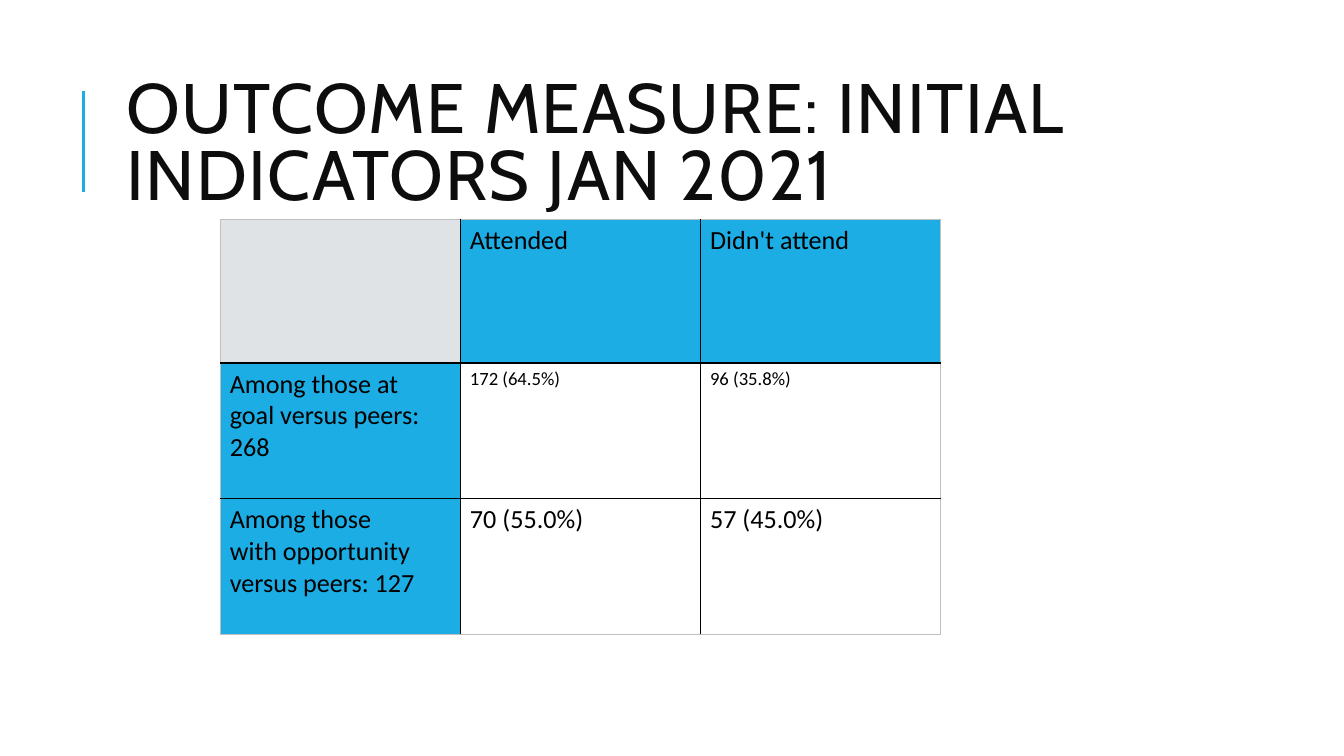
from lxml.etree import SubElement
from pptx import Presentation
from pptx.dml.color import RGBColor
from pptx.enum.shapes import MSO_CONNECTOR
from pptx.enum.text import MSO_ANCHOR, MSO_AUTO_SIZE, PP_ALIGN
from pptx.oxml.ns import qn
from pptx.util import Inches, Pt


def color(value):
    return RGBColor.from_string(value)


def add_border(cell, side, value, width):
    line = SubElement(cell._tc.get_or_add_tcPr(), qn(f"a:ln{side}"), w=str(Pt(width)))
    fill = SubElement(line, qn("a:solidFill"))
    SubElement(fill, qn("a:srgbClr"), val=value)


BLUE = "1CADE4"
GRAY = "DFE3E5"
HARD_SPACE = chr(160)

presentation = Presentation()
presentation.slide_width = Inches(10)
presentation.slide_height = Inches(10 * 9 / 16)
slide = presentation.slides.add_slide(presentation.slide_layouts[5])

accent = slide.shapes.add_connector(
    MSO_CONNECTOR.STRAIGHT, Inches(0.62), Inches(1.43), Inches(0.62), Inches(0.68)
)
accent.line.color.rgb = color(BLUE)
accent.line.width = Pt(1.5)
SubElement(accent._element.spPr, qn("a:effectLst"))

title = slide.shapes.title
title.left, title.top = Inches(0.84), Inches(0.48)
title.width, title.height = Inches(7.97), Inches(1.23)
title_frame = title.text_frame
title_frame.word_wrap = True
title_frame.auto_size = MSO_AUTO_SIZE.NONE
title_frame.vertical_anchor = MSO_ANCHOR.MIDDLE
paragraph = title_frame.paragraphs[0]
paragraph.alignment = PP_ALIGN.LEFT
paragraph.line_spacing = 0.8
run = paragraph.add_run()
run.text = "OUTCOME MEASURE: INITIAL INDICATORS JAN 2021"
run.font.name = "Cabin"
run.font.size = Pt(37.5)
run.font.color.rgb = color("0D0D0D")
run.font._element.set("spc", "75")

rows = [
    ["", "Attended", "Didn't attend"],
    [f"Among those at goal{HARD_SPACE}versus peers: 268", "172 (64.5%)", "96 (35.8%)"],
    [
        f"Among those with{HARD_SPACE}opportunity versus{HARD_SPACE}peers: 127",
        "70 (55.0%)",
        f"57{HARD_SPACE}(45.0%)",
    ],
]
row_heights = [1.07, 1.01, 1.01]
last = len(rows) - 1

table = slide.shapes.add_table(
    3, 3, Inches(1.64), Inches(1.63), Inches(5.36), Inches(3.09)
).table
for column in table.columns:
    column.width = Inches(5.36 / 3)

for row_index, texts in enumerate(rows):
    table.rows[row_index].height = Inches(row_heights[row_index])
    for column_index, text in enumerate(texts):
        cell = table.cell(row_index, column_index)
        cell.margin_left = cell.margin_right = Inches(0.07)
        cell.margin_top = cell.margin_bottom = Inches(0.04)
        outer_sides = {
            "L": column_index == 0,
            "R": column_index == last,
            "T": row_index == 0,
            "B": row_index == last,
        }
        for side, is_outer in outer_sides.items():
            if is_outer:
                add_border(cell, side, "BFBFBF", 0.5)
            else:
                add_border(cell, side, "000000", 1)

        if row_index and column_index:
            cell.fill.background()
        else:
            cell.fill.solid()
            cell.fill.fore_color.rgb = color(BLUE if text else GRAY)

        if text:
            run = cell.text_frame.paragraphs[0].add_run()
            run.text = text
            run.font.name = "Calibri"
            run.font.size = Pt(10 if row_index == 1 and column_index else 14)
            run.font.bold = False
            run.font.color.rgb = color("000000")

presentation.save("out.pptx")
